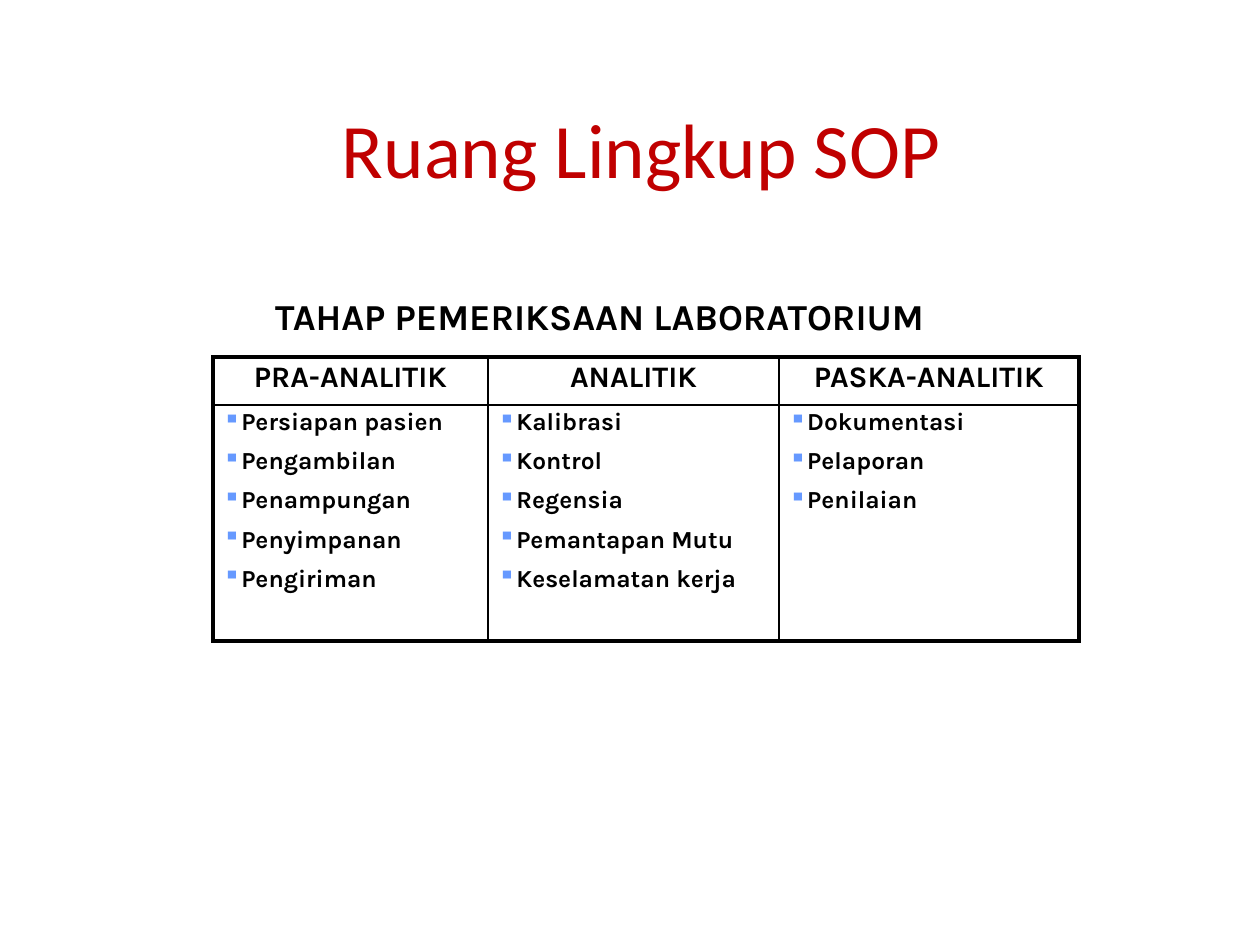
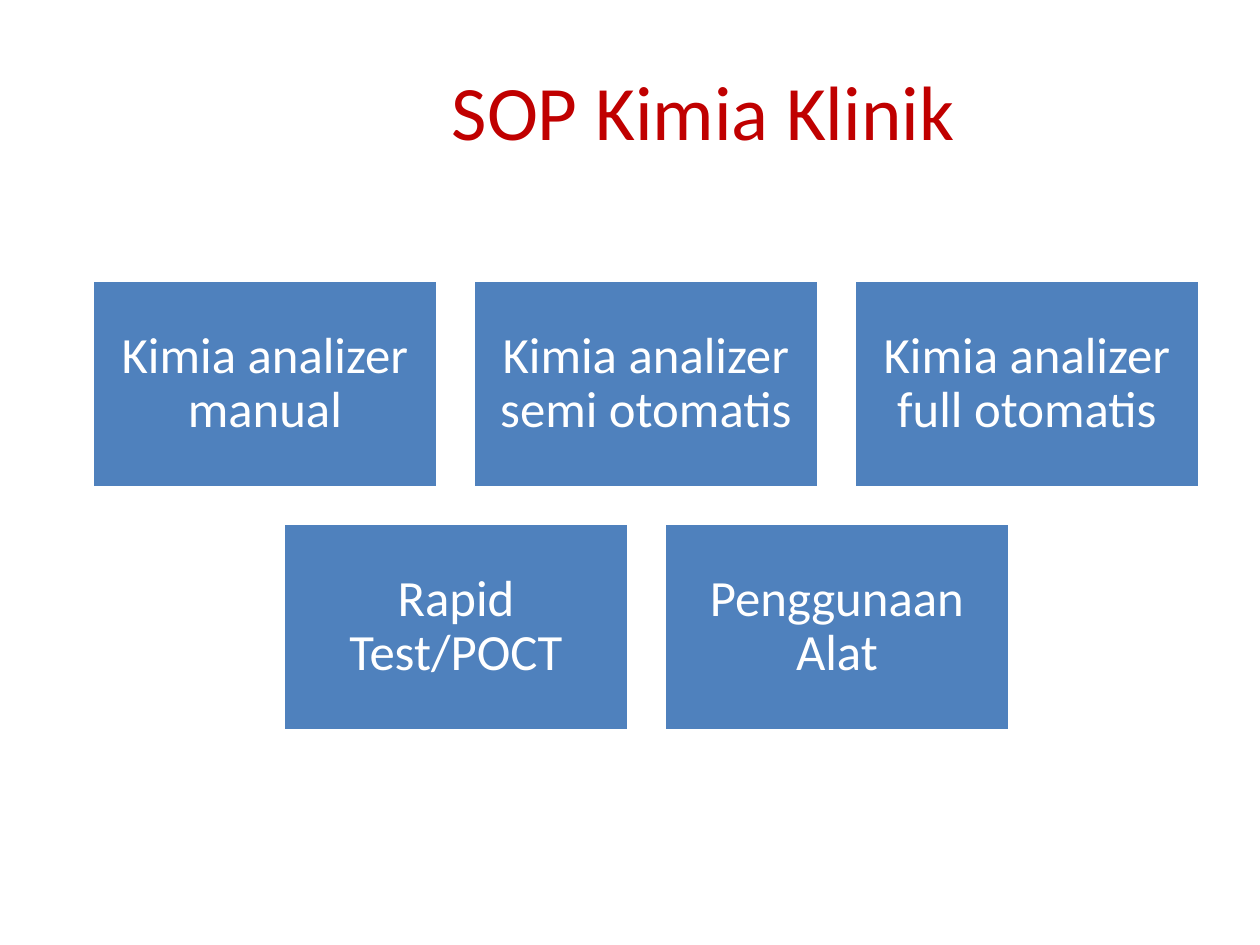
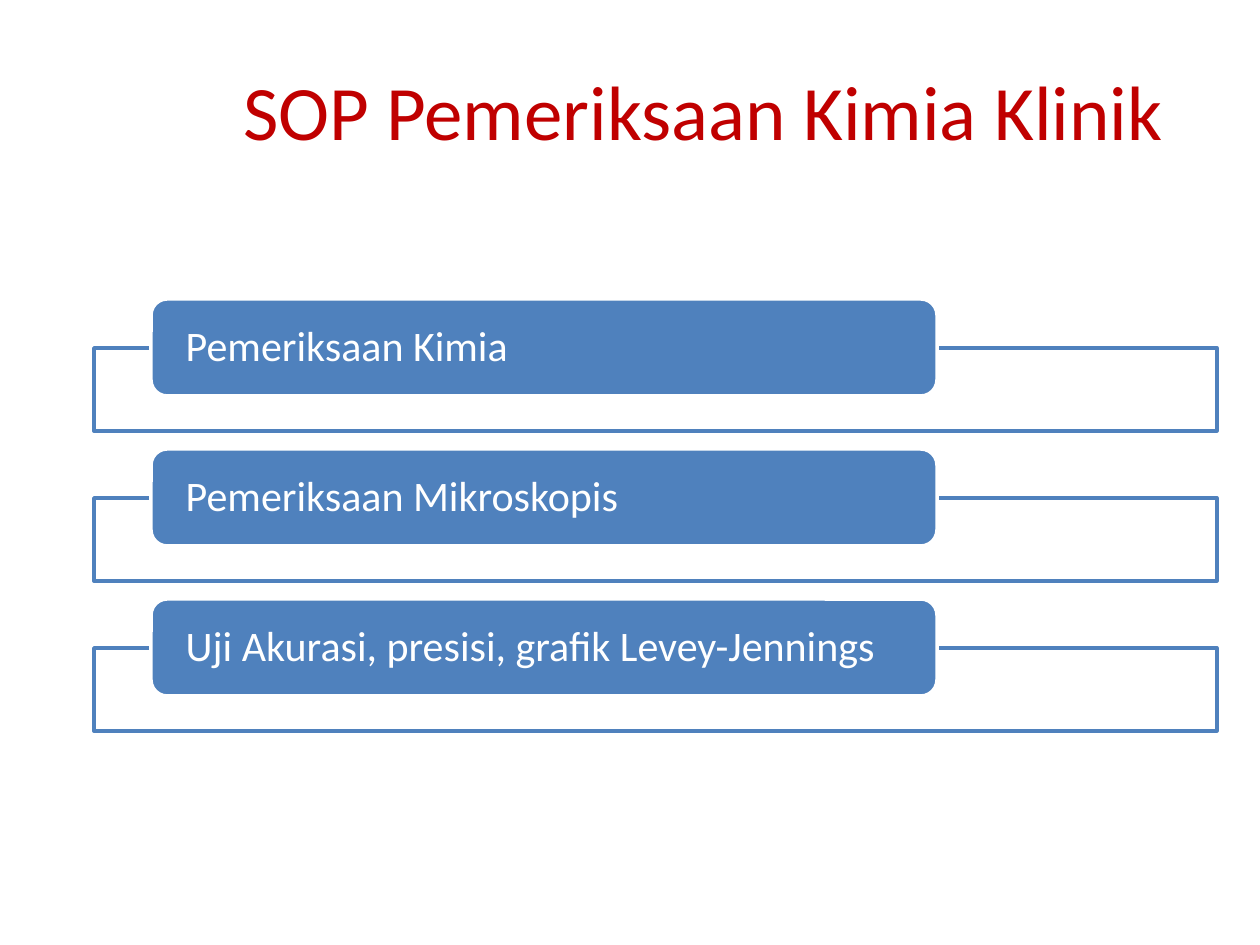
from lxml.etree import SubElement
from pptx import Presentation
from pptx.dml.color import RGBColor
from pptx.enum.shapes import MSO_SHAPE as Shape
from pptx.enum.text import MSO_ANCHOR as Anchor, PP_ALIGN as Align
from pptx.oxml.ns import qn
from pptx.util import Emu, Pt

COLORS = {
    "title": "C00000",
    "text": "000000",
    "bullet": "6699FF",
    "panel": "4F81BD",
    "white": "FFFFFF",
}
BODY_FONT, LAB_FONT = "Calibri", "Karla"
EMU_PER_PX = 914400 / 126
SLIDE_WIDTH, SLIDE_HEIGHT = 1260, 945
THICK, THIN = 2.25, 1


def px(length):
    return Emu(round(length * EMU_PER_PX))


def rgb(name):
    return RGBColor.from_string(COLORS[name])


def set_insets(target, across, down):
    target.margin_left = target.margin_right = px(across)
    target.margin_top = target.margin_bottom = px(down)


def add_bullet(paragraph):
    props = paragraph._p.get_or_add_pPr()
    props.set("marL", str(px(13)))
    props.set("indent", str(-px(13)))
    color = SubElement(props, qn("a:buClr"))
    SubElement(color, qn("a:srgbClr"), val=COLORS["bullet"])
    SubElement(props, qn("a:buChar"), char="▪")


def set_borders(cell, widths):
    """Draw the cell's borders; widths are points for left, right, top, bottom."""
    props = cell._tc.get_or_add_tcPr()
    for side, width in zip("LRTB", widths):
        border = SubElement(props, qn(f"a:ln{side}"), w=str(Pt(width)))
        fill = SubElement(border, qn("a:solidFill"))
        SubElement(fill, qn("a:srgbClr"), val=COLORS["text"])


class Deck:
    def __init__(self):
        self.prs = Presentation()
        self.prs.slide_width = px(SLIDE_WIDTH)
        self.prs.slide_height = px(SLIDE_HEIGHT)
        self.slide = None

    def new_slide(self, title, left=168, top=58):
        self.slide = self.prs.slides.add_slide(self.prs.slide_layouts[6])
        self.text(title, (left, top, 1071, 158), 44, "title", align=Align.CENTER)

    def set_lines(self, frame, lines, size, color, font=BODY_FONT, bold=False,
                  align=Align.LEFT, spacing=1.0, gap=0, bullets=False):
        """Fill the frame with one paragraph per line, gap points apart."""
        for index, line in enumerate(lines):
            paragraph = frame.add_paragraph() if index else frame.paragraphs[0]
            paragraph.text = line
            if bullets:
                add_bullet(paragraph)
            paragraph.alignment = align
            paragraph.line_spacing = spacing
            if index:
                paragraph.space_before = Pt(gap)
            style = paragraph.font
            style.name, style.size, style.bold = font, Pt(size), bold
            style.color.rgb = rgb(color)

    def text(self, line, box, size, color, wrap=True, insets=(13, 6), **style):
        frame = self.slide.shapes.add_textbox(*map(px, box)).text_frame
        frame.word_wrap = wrap
        set_insets(frame, *insets)
        self.set_lines(frame, [line], size, color, **style)

    def panel(self, box, kind=Shape.RECTANGLE, fill="panel", line="white"):
        panel = self.slide.shapes.add_shape(kind, *map(px, box))
        panel.shadow.inherit = False
        panel.fill.solid()
        panel.fill.fore_color.rgb = rgb(fill)
        panel.line.color.rgb = rgb(line)
        panel.line.width = Pt(2)
        return panel

    def label(self, panel, line, size, insets, align):
        frame = panel.text_frame
        frame.word_wrap = True
        frame.vertical_anchor = Anchor.MIDDLE
        set_insets(frame, *insets)
        self.set_lines(frame, [line], size, "white", align=align, spacing=0.9)

    def table(self, left, top, widths, heights, columns):
        """Draw a table from a dict of column heading to bulleted items."""
        table = self.slide.shapes.add_table(
            len(heights), len(widths), px(left), px(top),
            px(sum(widths)), px(sum(heights))).table
        table.first_row = table.horz_banding = False
        for row, height in zip(table.rows, heights):
            row.height = px(height)
        last = len(widths) - 1
        for index, (heading, items) in enumerate(columns.items()):
            table.columns[index].width = px(widths[index])
            sides = (THICK if index == 0 else THIN, THICK if index == last else THIN)
            head, body = table.cell(0, index), table.cell(1, index)
            for cell, edges in ((head, (THICK, THIN)), (body, (THIN, THICK))):
                set_insets(cell, 10, 5)
                set_borders(cell, sides + edges)
                cell.fill.background()
            self.set_lines(head.text_frame, [heading], 17, "text", LAB_FONT, True,
                           Align.CENTER, 0.9)
            self.set_lines(body.text_frame, items, 14, "text", LAB_FONT, True,
                           spacing=0.9, gap=7.7, bullets=True)


def scope_slide(deck):
    deck.new_slide("Ruang Lingkup SOP", 106, 96)
    deck.text("TAHAP PEMERIKSAAN LABORATORIUM", (265, 289, 752, 54), 20.9, "text",
              wrap=False, insets=(10, 5), font=LAB_FONT, bold=True)
    deck.table(213, 357, (275, 291, 300), (48, 236), {
        "PRA-ANALITIK": ["Persiapan pasien", "Pengambilan", "Penampungan",
                         "Penyimpanan", "Pengiriman"],
        "ANALITIK": ["Kalibrasi", "Kontrol", "Regensia", "Pemantapan Mutu",
                     "Keselamatan kerja"],
        "PASKA-ANALITIK": ["Dokumentasi", "Pelaporan", "Penilaian"],
    })


def procedures_slide(deck):
    deck.new_slide("SOP Kimia Klinik")
    rows = (
        ("Kimia analizer manual", "Kimia analizer semi otomatis",
         "Kimia analizer full otomatis"),
        ("Rapid Test/POCT", "Penggunaan Alat"),
    )
    center, top, width, height, gap = 646, 280, 346, 208, 35
    for row, procedures in enumerate(rows):
        row_width = len(procedures) * (width + gap) - gap
        for column, procedure in enumerate(procedures):
            left = center - row_width // 2 + column * (width + gap)
            card = deck.panel((left, top + row * (height + gap), width, height))
            deck.label(card, procedure, 29, (15, 15), Align.CENTER)


def examinations_slide(deck):
    deck.new_slide("SOP Pemeriksaan Kimia Klinik")
    examinations = ("Pemeriksaan Kimia", "Pemeriksaan Mikroskopis",
                    "Uji Akurasi, presisi, grafik Levey-Jennings")
    for index, examination in enumerate(examinations):
        top = 299 + index * 150
        deck.panel((94, top + 49, 1123, 83), fill="white", line="panel")
        tab = deck.panel((151, top, 786, 97), Shape.ROUNDED_RECTANGLE)
        deck.label(tab, examination, 24, (30, 0), Align.LEFT)


def main():
    deck = Deck()
    scope_slide(deck)
    procedures_slide(deck)
    examinations_slide(deck)
    deck.prs.save("out.pptx")


if __name__ == "__main__":
    main()
